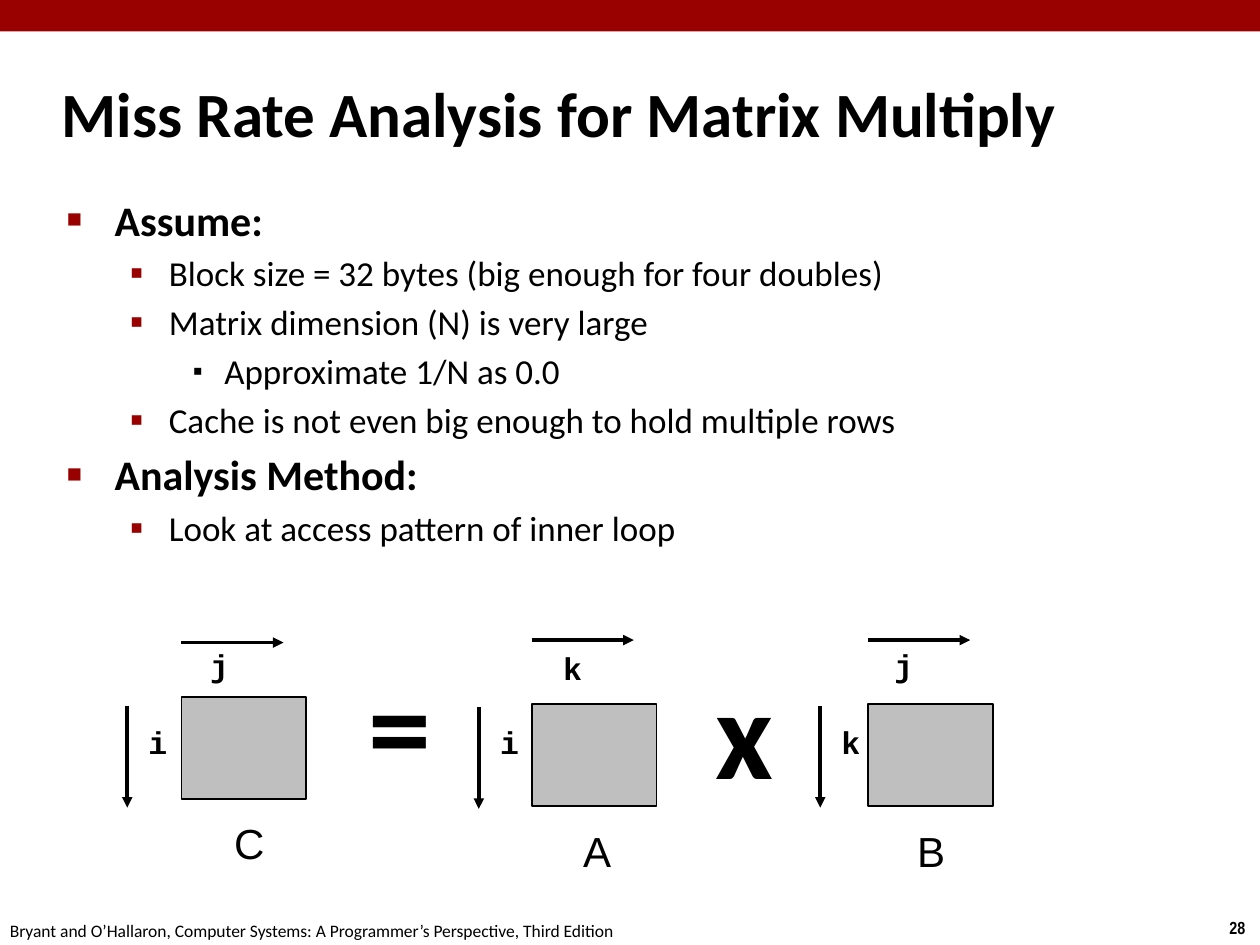
"""Build the slide on miss rate analysis for matrix multiplication."""
from dataclasses import dataclass
from typing import Optional

from lxml.etree import SubElement
from pptx import Presentation
from pptx.dml.color import RGBColor
from pptx.enum.shapes import MSO_CONNECTOR, MSO_SHAPE
from pptx.enum.text import MSO_ANCHOR, MSO_AUTO_SIZE, PP_ALIGN
from pptx.oxml.ns import qn
from pptx.util import Inches, Pt


@dataclass(frozen=True)
class Theme:
    accent: RGBColor = RGBColor(0x99, 0x00, 0x00)
    ink: RGBColor = RGBColor(0x00, 0x00, 0x00)
    paper: RGBColor = RGBColor(0xFF, 0xFF, 0xFF)
    block: RGBColor = RGBColor(0xBF, 0xBF, 0xBF)
    bullet_font: str = "Arial"


@dataclass(frozen=True)
class Style:
    font: str
    size: int
    bold: bool = False


@dataclass(frozen=True)
class Level:
    style: Style
    margin: float
    hanging: float
    bullet: str
    bullet_percent: int
    bullet_color: RGBColor


@dataclass(frozen=True)
class Matrix:
    name: str
    row_index: str
    column_index: str
    left: float
    top: float
    across_y: float
    across_label: tuple[float, float]
    down_x: float
    down_y: float
    name_at: tuple[float, float]


THEME = Theme()
TITLE = Style("Calibri", 36, True)
OPERATOR = Style("Calibri", 72, True)
INDEX = Style("Courier New", 18, True)
NAME = Style("Arial", 24)
SOURCE = Style("Calibri", 10)
PAGE = Style("Arial Narrow", 10, True)
DETAIL = Style("Calibri", 20)
LEVELS = (
    Level(Style("Calibri", 24, True), 0.38, 0.38, "■", 60, THEME.accent),
    Level(DETAIL, 0.81, 0.31, "▪", 110, THEME.accent),
    Level(DETAIL, 1.25, 0.25, "▪", 80, THEME.ink),
)
OUTLINE = (
    (0, "Assume:"),
    (1, "Block size = 32 bytes (big enough for four doubles)"),
    (1, "Matrix dimension (N) is very large"),
    (2, "Approximate 1/N as 0.0"),
    (1, "Cache is not even big enough to hold multiple rows"),
    (0, "Analysis Method:"),
    (1, "Look at access pattern of inner loop"),
)
MATRICES = (
    Matrix("A", "i", "k", 4.22, 5.59, 5.08, (4.37, 5.1), 3.8, 5.61, (4.53, 6.5)),
    Matrix("B", "k", "j", 6.89, 5.59, 5.08, (7, 5.08), 6.51, 5.6, (7.18, 6.5)),
    Matrix("C", "i", "j", 1.44, 5.53, 5.1, (1.57, 5.08), 1.01, 5.6, (1.76, 6.44)),
)
ARROW_LENGTH = 0.81
INDEX_TOP = 5.69


def place(shape, left: float, top: float, width: float, height: float) -> None:
    """Move and size a shape in inches."""
    shape.left, shape.top = Inches(left), Inches(top)
    shape.width, shape.height = Inches(width), Inches(height)


def write(paragraph, words: str, style: Style) -> None:
    """Add one left-aligned run in the given style."""
    paragraph.alignment = PP_ALIGN.LEFT
    run = paragraph.add_run()
    run.text = words
    run.font.name = style.font
    run.font.size = Pt(style.size)
    run.font.bold = style.bold
    run.font.color.rgb = THEME.ink


def add_text(shapes, words: str, style: Style, left: float, top: float,
             width: float, height: float, wrap: bool = False) -> None:
    """Add a plain text box."""
    frame = shapes.add_textbox(
        Inches(left), Inches(top), Inches(width), Inches(height)).text_frame
    frame.word_wrap = wrap
    write(frame.paragraphs[0], words, style)


def add_block(shapes, left: float, top: float, width: float, height: float,
              fill: RGBColor, border: Optional[RGBColor] = None):
    """Add a flat rectangle, outlined if a border colour is given."""
    block = shapes.add_shape(
        MSO_SHAPE.RECTANGLE, Inches(left), Inches(top), Inches(width), Inches(height))
    block.shadow.inherit = False
    block.fill.solid()
    block.fill.fore_color.rgb = fill
    if border is None:
        block.line.fill.background()
    else:
        block.line.color.rgb = border
        block.line.width = Pt(1)
    return block


def add_index(shapes, letter: str, left: float, top: float) -> None:
    """Add the letter of a loop index on a white ground."""
    frame = add_block(shapes, left, top, 0.35, 0.4, THEME.paper).text_frame
    frame.word_wrap = False
    frame.vertical_anchor = MSO_ANCHOR.TOP
    write(frame.paragraphs[0], letter, INDEX)


def add_arrow(shapes, left: float, top: float, across: float, down: float) -> None:
    """Add a straight arrow from a point by the given distances."""
    arrow = shapes.add_connector(
        MSO_CONNECTOR.STRAIGHT, Inches(left), Inches(top),
        Inches(left + across), Inches(top + down))
    arrow.line.color.rgb = THEME.ink
    arrow.line.width = Pt(2)
    SubElement(arrow.line._get_or_add_ln(), qn("a:tailEnd"), type="triangle")
    SubElement(arrow._element.spPr, qn("a:effectLst"))


def add_matrix(slide, matrix: Matrix) -> None:
    """Add a matrix with its name and index arrows as one group."""
    shapes = slide.shapes.add_group_shape().shapes
    add_index(shapes, matrix.column_index, *matrix.across_label)
    add_index(shapes, matrix.row_index, matrix.down_x + 0.07, INDEX_TOP)
    add_block(shapes, matrix.left, matrix.top, 0.99, 0.81, THEME.block, THEME.ink)
    add_arrow(shapes, matrix.left, matrix.across_y, ARROW_LENGTH, 0)
    add_arrow(shapes, matrix.down_x, matrix.down_y, 0, ARROW_LENGTH)
    add_text(shapes, matrix.name, NAME, *matrix.name_at, 0.44, 0.5)


def add_item(paragraph, depth: int, words: str) -> None:
    """Write one bulleted line of the outline."""
    level = LEVELS[depth]
    paragraph.level = depth
    paragraph.space_before = Pt(level.style.size * 0.2)
    write(paragraph, words, level.style)
    properties = paragraph._p.get_or_add_pPr()
    properties.set("marL", str(Inches(level.margin)))
    properties.set("indent", str(-Inches(level.hanging)))
    color = SubElement(properties, qn("a:buClr"))
    SubElement(color, qn("a:srgbClr"), val=str(level.bullet_color))
    SubElement(properties, qn("a:buSzPct"), val=str(level.bullet_percent * 1000))
    SubElement(properties, qn("a:buFont"), typeface=THEME.bullet_font)
    SubElement(properties, qn("a:buChar"), char=level.bullet)


def main() -> None:
    """Build and save the slide."""
    deck = Presentation()
    deck.slide_width, deck.slide_height = Inches(10), Inches(7.5)
    slide = deck.slides.add_slide(deck.slide_layouts[1])
    title, outline = slide.placeholders
    place(title, 0.39, 0.48, 8.3, 0.83)
    place(outline, 0.43, 1.49, 8.64, 5.44)
    for placeholder in (title, outline):
        placeholder.text_frame.auto_size = MSO_AUTO_SIZE.NONE
    title.text_frame.vertical_anchor = MSO_ANCHOR.MIDDLE
    write(title.text_frame.paragraphs[0], "Miss Rate Analysis for Matrix Multiply", TITLE)
    body = outline.text_frame
    for position, (depth, words) in enumerate(OUTLINE):
        add_item(body.add_paragraph() if position else body.paragraphs[0], depth, words)

    add_block(slide.shapes, 0, 0, 10, 0.25, THEME.accent)
    add_text(slide.shapes, "28", PAGE, 9.66, 7.23, 0.34, 0.27)
    add_text(slide.shapes, "Bryant and O’Hallaron, Computer Systems: "
             "A Programmer’s Perspective, Third Edition", SOURCE, -0.02, 7.25, 5.08, 0.27)
    for matrix in MATRICES:
        add_matrix(slide, matrix)
    add_text(slide.shapes, "=", OPERATOR, 2.83, 5.08, 0.58, 2.52, wrap=True)
    add_text(slide.shapes, "x", OPERATOR, 5.58, 5.14, 0.58, 2.52, wrap=True)
    deck.save("out.pptx")


if __name__ == "__main__":
    main()
